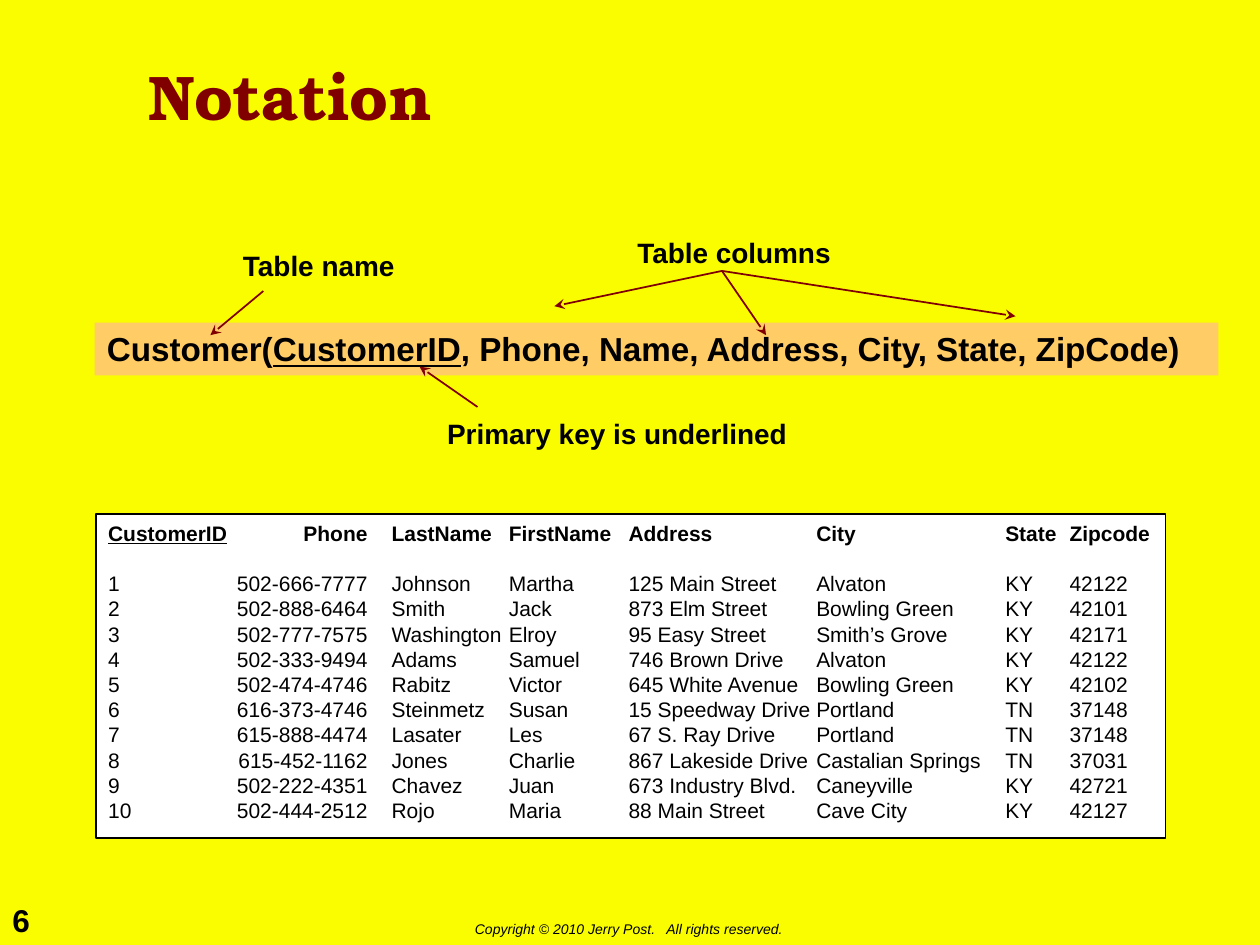
from dataclasses import dataclass

from lxml import etree
from pptx import Presentation
from pptx.dml import color
from pptx.enum import shapes, text
from pptx.oxml import ns
from pptx.util import Inches, Pt

COLORS = {
    "background": "FAFD00",
    "accent": "800000",
    "strip": "FFCC66",
    "paper": "FFFFFF",
    "ink": "000000",
}


@dataclass
class Style:
    size: float
    bold: bool = False
    italic: bool = False
    font: str = "Arial"
    color: str = "ink"


@dataclass
class Label:
    words: str
    box: tuple[float, float, float, float]
    style: Style


@dataclass
class Arrow:
    start: tuple[float, float]
    end: tuple[float, float]


CALLOUT = Style(16, bold=True)
NOTATION = Style(19, bold=True)
HEADER = Style(12, bold=True)
BODY = Style(12)
TITLE = Label(
    "Notation",
    (1.08, 0.17, 7.83, 1.25),
    Style(36, bold=True, font="TeX Gyre Bonum", color="accent"),
)
LABELS = [
    Label("6", (0, 7.1, 0.5, 0.4), Style(18, bold=True)),
    Label(
        "Copyright © 2010 Jerry Post.   All rights reserved.",
        (3.67, 7.26, 2.68, 0.24),
        Style(8, italic=True),
    ),
    Label("Table name", (1.83, 1.92, 1.42, 0.37), CALLOUT),
    Label("Primary key is underlined", (3.45, 3.26, 2.91, 0.37), CALLOUT),
    Label("Table columns", (4.96, 1.82, 1.76, 0.37), CALLOUT),
]
COLUMNS_ORIGIN = (5.73, 2.15)
ARROWS = [
    Arrow((2.09, 2.31), (1.67, 2.66)),
    Arrow(COLUMNS_ORIGIN, (4.4, 2.43)),
    Arrow(COLUMNS_ORIGIN, (8.06, 2.51)),
    Arrow(COLUMNS_ORIGIN, (6.08, 2.66)),
    Arrow((3.79, 3.23), (3.33, 2.91)),
]
TABS = [
    (2.06, "r"), (2.25, "l"), (3.18, "l"), (4.13, "l"),
    (5.62, "l"), (7.12, "l"), (7.63, "l"),
]
FIELDS = ["Phone", "LastName", "FirstName", "Address", "City", "State", "Zipcode"]
CUSTOMERS = [
    ("502-666-7777", "Johnson", "Martha", "125 Main Street", "Alvaton", "KY", "42122"),
    ("502-888-6464", "Smith", "Jack", "873 Elm Street", "Bowling Green", "KY", "42101"),
    ("502-777-7575", "Washington", "Elroy", "95 Easy Street", "Smith’s Grove", "KY", "42171"),
    ("502-333-9494", "Adams", "Samuel", "746 Brown Drive", "Alvaton", "KY", "42122"),
    ("502-474-4746", "Rabitz", "Victor", "645 White Avenue", "Bowling Green", "KY", "42102"),
    ("616-373-4746", "Steinmetz", "Susan", "15 Speedway Drive", "Portland", "TN", "37148"),
    ("615-888-4474", "Lasater", "Les", "67 S. Ray Drive", "Portland", "TN", "37148"),
    ("615-452-1162", "Jones", "Charlie", "867 Lakeside Drive", "Castalian Springs", "TN", "37031"),
    ("502-222-4351", "Chavez", "Juan", "673 Industry Blvd.", "Caneyville", "KY", "42721"),
    ("502-444-2512", "Rojo", "Maria", "88 Main Street", "Cave City", "KY", "42127"),
]
LINE_PITCH = Pt(14.4)


def rgb(name: str) -> color.RGBColor:
    return color.RGBColor.from_string(COLORS[name])


def add_run(paragraph, words: str, style: Style, underline: bool = False) -> None:
    run = paragraph.add_run()
    run.text = words
    run.font.name = style.font
    run.font.size = Pt(style.size)
    run.font.bold = style.bold
    run.font.italic = style.italic
    run.font.underline = underline
    run.font.color.rgb = rgb(style.color)


def add_label(slide, label: Label):
    shape = slide.shapes.add_textbox(*map(Inches, label.box))
    frame = shape.text_frame
    frame.word_wrap = False
    frame.auto_size = text.MSO_AUTO_SIZE.SHAPE_TO_FIT_TEXT
    add_run(frame.paragraphs[0], label.words, label.style)
    return frame


def add_title(slide) -> None:
    frame = add_label(slide, TITLE)
    frame.word_wrap = True
    frame.auto_size = text.MSO_AUTO_SIZE.NONE
    frame.vertical_anchor = text.MSO_ANCHOR.MIDDLE
    frame.paragraphs[0].line_spacing = 0.9


def add_panel(slide, box: tuple[float, float, float, float], fill: str):
    shape = slide.shapes.add_shape(shapes.MSO_SHAPE.RECTANGLE, *map(Inches, box))
    shape.shadow.inherit = False
    shape.fill.solid()
    shape.fill.fore_color.rgb = rgb(fill)
    shape.line.fill.background()
    shape.text_frame.vertical_anchor = text.MSO_ANCHOR.TOP
    shape.text_frame.paragraphs[0].alignment = text.PP_ALIGN.LEFT
    return shape


def add_notation(slide) -> None:
    shape = add_panel(slide, (0.75, 2.56, 8.92, 0.42), "strip")
    shape.text_frame.word_wrap = True
    paragraph = shape.text_frame.paragraphs[0]
    add_run(paragraph, "Customer(", NOTATION)
    add_run(paragraph, "CustomerID", NOTATION, underline=True)
    add_run(paragraph, ", Phone, Name, Address, City, State, ZipCode)", NOTATION)


def add_arrow(slide, arrow: Arrow) -> None:
    connector = slide.shapes.add_connector(
        shapes.MSO_CONNECTOR.STRAIGHT, *map(Inches, arrow.start + arrow.end)
    )
    connector.line.color.rgb = rgb("accent")
    connector.line.width = Pt(1)
    properties = connector._element.spPr
    etree.SubElement(properties.find(ns.qn("a:ln")), ns.qn("a:tailEnd"), type="stealth")
    etree.SubElement(properties, ns.qn("a:effectLst"))


def format_row(paragraph) -> None:
    tab_list = etree.SubElement(paragraph._p.get_or_add_pPr(), ns.qn("a:tabLst"))
    for position, alignment in TABS:
        etree.SubElement(
            tab_list, ns.qn("a:tab"), pos=str(int(Inches(position))), algn=alignment
        )
    paragraph.alignment = text.PP_ALIGN.LEFT
    paragraph.line_spacing = LINE_PITCH


def add_customers(slide) -> None:
    shape = add_panel(slide, (0.76, 4.08, 8.49, 2.57), "paper")
    shape.line.color.rgb = rgb("ink")
    shape.line.width = Pt(1)
    frame = shape.text_frame
    frame.word_wrap = False
    header = frame.paragraphs[0]
    format_row(header)
    header.space_after = LINE_PITCH
    add_run(header, "CustomerID", HEADER, underline=True)
    add_run(header, "\t" + "\t".join(FIELDS), HEADER)
    for number, customer in enumerate(CUSTOMERS, start=1):
        paragraph = frame.add_paragraph()
        format_row(paragraph)
        add_run(paragraph, "\t".join((str(number), *customer)), BODY)


def main() -> None:
    presentation = Presentation()
    presentation.slide_width = Inches(10)
    presentation.slide_height = Inches(7.5)
    slide = presentation.slides.add_slide(presentation.slide_layouts[6])
    slide.background.fill.solid()
    slide.background.fill.fore_color.rgb = rgb("background")
    add_title(slide)
    for label in LABELS:
        add_label(slide, label)
    add_notation(slide)
    for arrow in ARROWS:
        add_arrow(slide, arrow)
    add_customers(slide)
    presentation.save("out.pptx")


if __name__ == "__main__":
    main()
